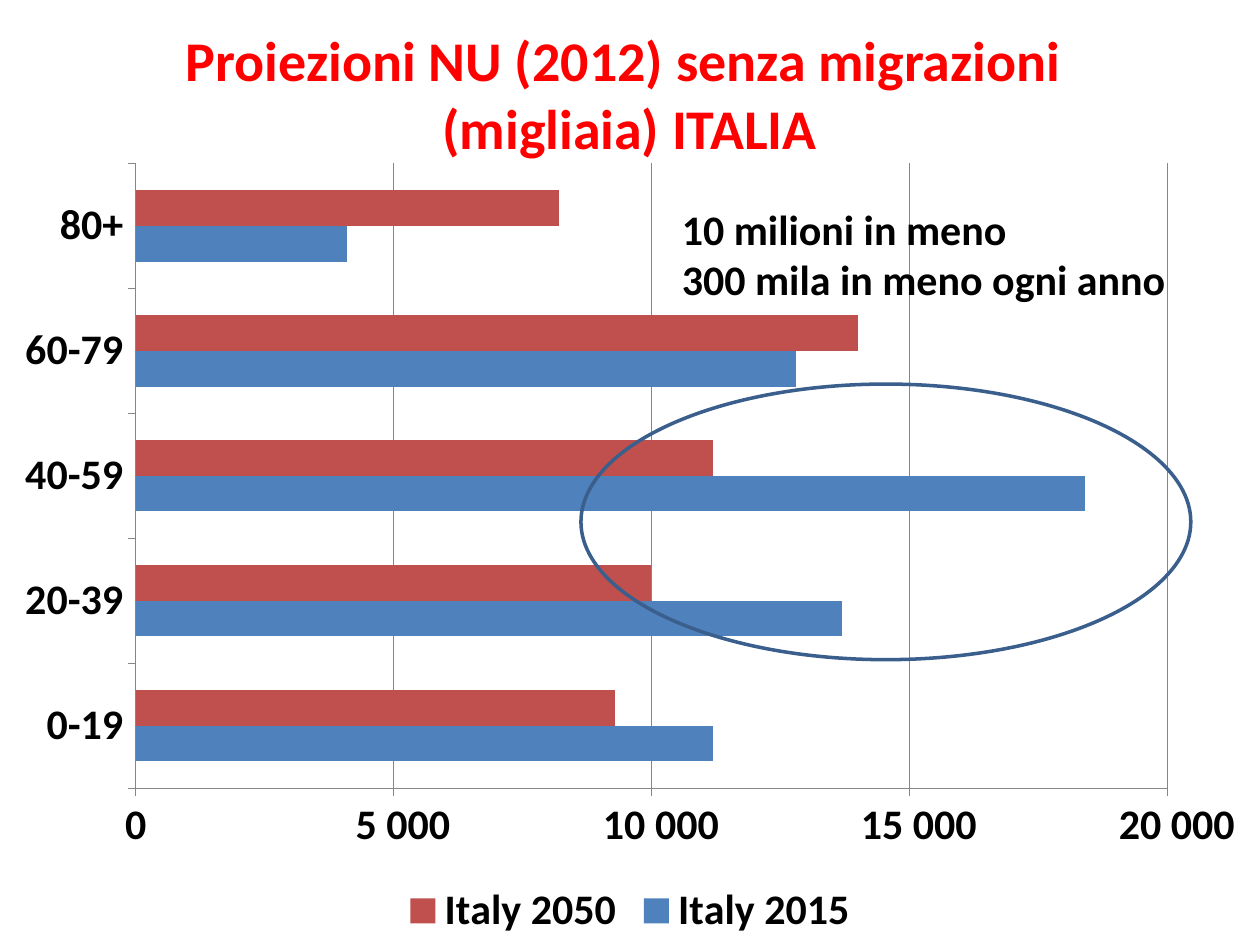
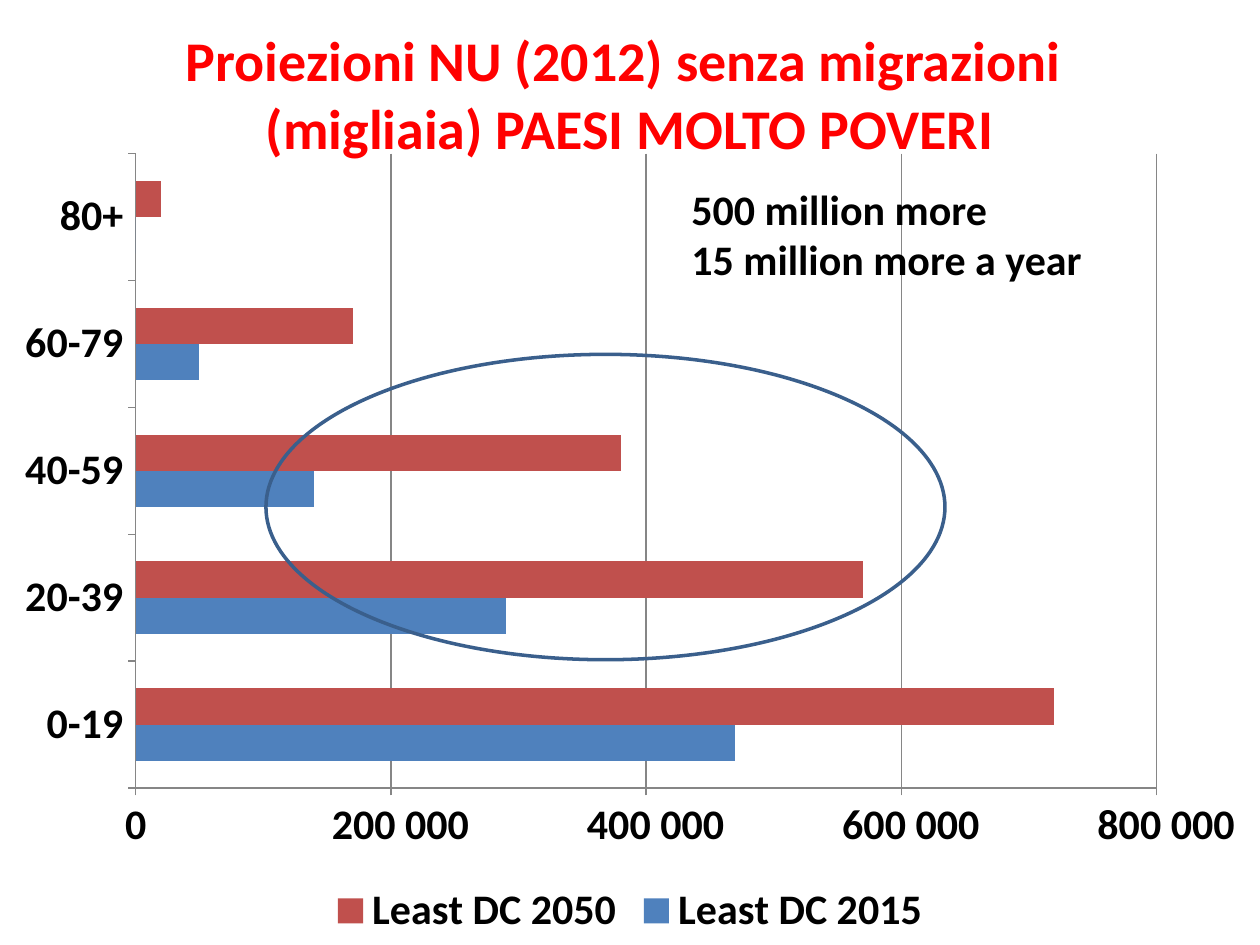
from pptx import Presentation
from pptx import util as u
from pptx.chart import data as cd
from pptx.dml import color as dc
from pptx.enum import chart as ec, shapes as es, text as et

Pt = u.Pt
FONT = "Calibri"
RED, BLACK, GREY, NAVY = "FF0000", "000000", "868686", "3A5F8C"
BARS = ("4F81BD", "C0504D")
AGES = ("0-19", "20-39", "40-59", "60-79", "80+")
YEARS = (2015, 2050)
DIGITS = r"#\ ###\ ###\ ##0;\-#\ ###\ ###\ ##0;0"
WIDE, HIGH = 720, 540
TITLE = (0, 11.2, WIDE, 85)
HEAD = "Proiezioni NU (2012) senza migrazioni "


def rgb(code):
    return dc.RGBColor.from_string(code)


def style(font, size, color=BLACK):
    font.name, font.size, font.bold = FONT, Pt(size), True
    font.color.rgb = rgb(color)


def place(box):
    return [Pt(v) for v in box]


def add_text(slide, box, lines, size, color, align):
    frame = slide.shapes.add_textbox(*place(box)).text_frame
    frame.word_wrap = True
    frame.text = "\n".join(lines)
    for para in frame.paragraphs:
        para.alignment = align
        style(para.font, size, color)


def add_bars(slide, top, area, rows):
    data = cd.CategoryChartData()
    data.categories = AGES
    for year, row in zip(YEARS, rows):
        data.add_series(f"{area} {year}", row)
    chart = slide.shapes.add_chart(
        ec.XL_CHART_TYPE.BAR_CLUSTERED,
        *place((0, top, WIDE, HIGH - top)), data).chart
    chart.has_title = False
    style(chart.font, 24)

    # Bars
    plot = chart.plots[0]
    plot.gap_width, plot.overlap = 150, 0
    plot.vary_by_categories = False
    for series, color in zip(plot.series, BARS):
        series.format.fill.solid()
        series.format.fill.fore_color.rgb = rgb(color)

    # Axes and grid
    ages, scale = chart.category_axis, chart.value_axis
    scale.has_major_gridlines = True
    for axis in (ages, scale):
        axis.major_tick_mark = ec.XL_TICK_MARK.OUTSIDE
        style(axis.tick_labels.font, 24)
    for part in (ages, scale, scale.major_gridlines):
        part.format.line.color.rgb = rgb(GREY)
        part.format.line.width = Pt(0.75)
    scale.tick_labels.number_format = DIGITS
    scale.tick_labels.number_format_is_linked = False

    # Legend
    chart.has_legend = True
    chart.legend.position = ec.XL_LEGEND_POSITION.BOTTOM
    chart.legend.include_in_layout = False
    style(chart.legend.font, 24)


def add_ring(slide, box):
    ring = slide.shapes.add_shape(es.MSO_SHAPE.OVAL, *place(box))
    ring.shadow.inherit = False
    ring.fill.background()
    ring.line.color.rgb = rgb(NAVY)
    ring.line.width = Pt(2)


def add_page(deck, place_name, top, area, rows, ring, note, lines):
    slide = deck.slides.add_slide(deck.slide_layouts[6])
    add_bars(slide, top, area, rows)
    add_text(slide, TITLE, (HEAD, f"(migliaia) {place_name}"), 32, RED,
             et.PP_ALIGN.CENTER)
    add_ring(slide, ring)
    add_text(slide, note, lines, 24, BLACK, et.PP_ALIGN.LEFT)


def main():
    deck = Presentation()
    deck.slide_width, deck.slide_height = Pt(WIDE), Pt(HIGH)

    # Italy
    add_page(deck, "ITALIA", 84.3, "Italy",
             ((11200, 13700, 18400, 12800, 4100),
              (9300, 10000, 11200, 14000, 8200)),
             (332, 219.5, 348.5, 157.5), (382.5, 112.5, 298, 65.5),
             ("10 milioni in meno", "300 mila in meno ogni anno"))

    # Least developed countries
    add_page(deck, "PAESI MOLTO POVERI", 78.6, "Least DC",
             ((470000, 290000, 140000, 50000, 0),
              (720000, 570000, 380000, 170000, 20000)),
             (152, 202.5, 388, 174.5), (388, 101.2, 258.5, 65.5),
             ("500 million more", "15 million more a year"))

    deck.save("out.pptx")


if __name__ == "__main__":
    main()
